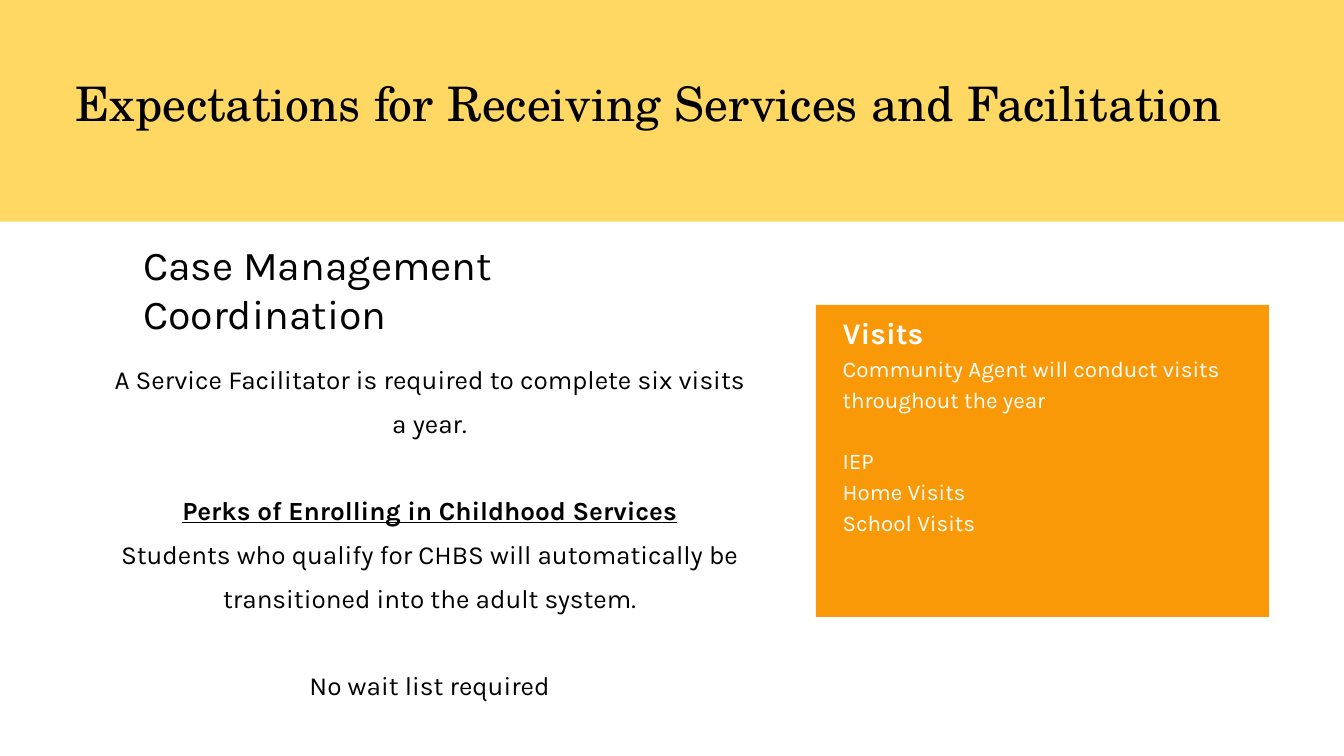
"""Build a slide on expectations for receiving services and facilitation."""
from pptx import Presentation
from pptx.dml.color import RGBColor
from pptx.enum.shapes import MSO_SHAPE
from pptx.enum.text import MSO_ANCHOR, MSO_AUTO_SIZE, PP_ALIGN
from pptx.util import Cm, Pt

RECTANGLE = MSO_SHAPE.RECTANGLE
TOP = MSO_ANCHOR.TOP
NO_FIT = MSO_AUTO_SIZE.NONE
LEFT, CENTER = PP_ALIGN.LEFT, PP_ALIGN.CENTER
SANS, SERIF = "Karla", "TeX Gyre Schola"
COLORS = {"band": "FFD863", "panel": "FA9908", "dark": "000000", "light": "FFFFFF"}


def place(shape, left, top, width, height):
    shape.left, shape.top = Cm(left), Cm(top)
    shape.width, shape.height = Cm(width), Cm(height)


def write(box, lines, font, size, color, spacing, align=LEFT, inset=0.0):
    frame = box.text_frame
    frame.text = "\n".join(lines)
    frame.word_wrap = True
    frame.auto_size = NO_FIT
    frame.vertical_anchor = TOP
    frame.margin_left = frame.margin_right = Cm(inset)
    frame.margin_top = frame.margin_bottom = Cm(inset)
    for para in frame.paragraphs:
        para.alignment = align
        para.line_spacing = spacing
        for span in para.runs:
            span.font.name = font
            span.font.size = Pt(size)
            span.font.color.rgb = RGBColor.from_string(COLORS[color])
    return frame


deck = Presentation()
deck.slide_width, deck.slide_height = Cm(50.8), Cm(28.58)
page = deck.slides.add_slide(deck.slide_layouts[5])

for name, bounds in (
    ("panel", (30.84, 11.53, 17.12, 11.79)),
    ("band", (0, 0, 50.8, 8.38)),
):
    block = page.shapes.add_shape(RECTANGLE, *map(Cm, bounds))
    block.shadow.inherit = False
    block.fill.solid()
    block.fill.fore_color.rgb = RGBColor.from_string(COLORS[name])
    block.line.fill.background()

title = page.shapes.title
page.shapes.element.append(title.element)
place(title, 2.84, 2.13, 45.09, 2.18)
write(title, ["Expectations for Receiving Services and Facilitation"],
      SERIF, 51, "dark", 1.3)

heading = page.shapes.add_textbox(*map(Cm, (5.16, 8.81, 23.09, 4.01)))
write(heading, ["Case Management Coordination"], SANS, 44, "dark", 1.0, inset=0.25)

services = page.shapes.add_textbox(*map(Cm, (2.95, 13.26, 25.3, 12.93)))
services_frame = write(services, [
    "A Service Facilitator is required to complete six visits a year.",
    "Perks of Enrolling in Childhood Services",
    "Students who qualify for CHBS will automatically be transitioned into the adult system.",
    "No wait list required",
], SANS, 28, "dark", 1.4, CENTER)
services_frame.margin_left = Cm(1.27)
perks, wait_list = services_frame.paragraphs[1], services_frame.paragraphs[3]
perks.space_before = wait_list.space_before = Pt(46.6)
perks.runs[0].font.bold = True
perks.runs[0].font.underline = True

visits_title = page.shapes.add_textbox(*map(Cm, (31.85, 11.61, 12.19, 1.37)))
visits_title_frame = write(visits_title, ["Visits"], SANS, 32, "light", 1.2)
visits_title_frame.paragraphs[0].runs[0].font.bold = True

visits = page.shapes.add_textbox(*map(Cm, (31.85, 13.26, 15.09, 9.3)))
visits_frame = write(visits, [
    "Community Agent will conduct visits throughout the year",
    "IEP",
    "Home Visits",
    "School Visits",
], SANS, 24, "light", 1.15)
visits_frame.paragraphs[1].space_before = Pt(33)

deck.save("out.pptx")
